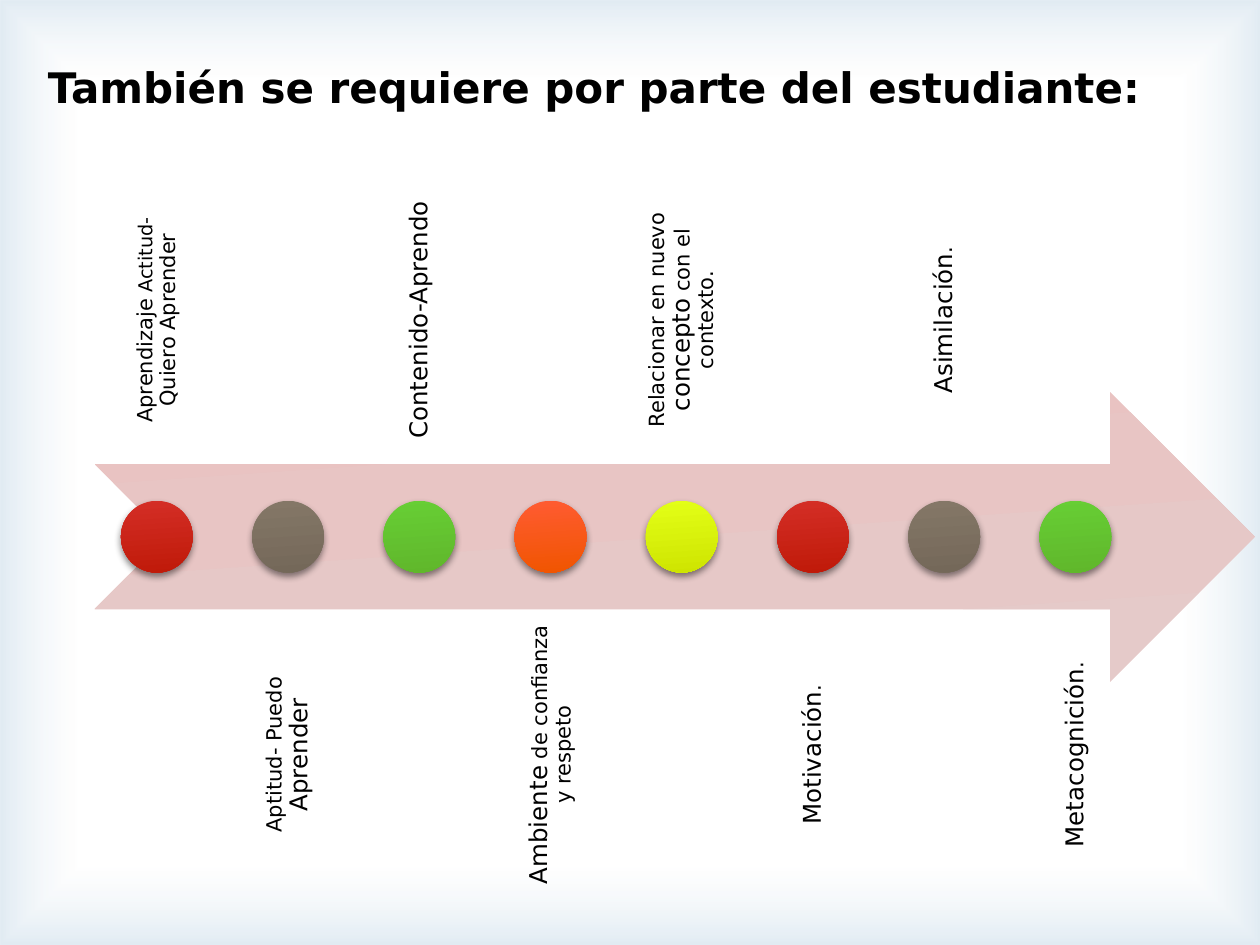
import dataclasses
import lxml.etree
import pptx
import pptx.dml.color
import pptx.enum.shapes
import pptx.enum.text
import pptx.oxml
import pptx.oxml.ns
import pptx.util

SHAPE = pptx.enum.shapes.MSO_SHAPE
ALIGN = pptx.enum.text.PP_ALIGN
ANCHOR = pptx.enum.text.MSO_ANCHOR
qn = pptx.oxml.ns.qn
inch = pptx.util.Inches


@dataclasses.dataclass(frozen=True)
class Theme:
    font: str = "DejaVu Sans"
    ink: str = "000000"
    head: int = 24
    large: int = 14
    base: int = 12
    small: int = 11
    arrow: tuple = ("E9C3C2", "E5CAC9")
    red: tuple = ("D42E26", "BF1A09")
    brown: tuple = ("847767", "746859")
    green: tuple = ("67CE35", "60B72B")
    orange: tuple = ("FF5B32", "F05500")
    yellow: tuple = ("E3FF17", "CEE400")


THEME = Theme()
WIDE, HIGH = 10, 7.5

# The row of steps: one column per step, labels by turns above and below
LEFT, PITCH = 0.75, 7.29 / 7
LABEL = (0.99, 2.3)
ROWS = (1.39, 4.84)
BAND = 3.11
DOT = 0.57

STEPS = [
    (THEME.red, [("Aprendizaje", THEME.base), (" Actitud-", THEME.small),
                 (" Quiero Aprender", THEME.base)]),
    (THEME.brown, [("Aptitud- Puedo ", THEME.base), ("Aprender", THEME.large)]),
    (THEME.green, [("Contenido-Aprendo", THEME.large)]),
    (THEME.orange, [("Ambiente", THEME.large),
                    (" de confianza y respeto", THEME.base)]),
    (THEME.yellow, [("Relacionar en nuevo ", THEME.base),
                    ("concepto", THEME.large),
                    (" con el contexto.", THEME.base)]),
    (THEME.red, [("Motivación", THEME.large), (".", THEME.base)]),
    (THEME.brown, [("Asimilación", THEME.large), (".", THEME.base)]),
    (THEME.green, [("Metacognición", THEME.large), (".", THEME.base)]),
]


def write(frame, runs, bold=False, align=ALIGN.LEFT, anchor=ANCHOR.TOP,
          inset=None, turn=None, line=None):
    """Fill a text frame with (text, size) runs."""
    frame.word_wrap = True
    frame.auto_size = pptx.enum.text.MSO_AUTO_SIZE.NONE
    frame.vertical_anchor = anchor
    if inset is not None:
        frame.margin_left = frame.margin_right = inch(inset)
        frame.margin_top = frame.margin_bottom = inch(inset)
    if turn:
        frame._txBody.bodyPr.set("vert", turn)
    para = frame.paragraphs[0]
    para.alignment = align
    if line:
        para.line_spacing = line
    for text, size in runs:
        run = para.add_run()
        run.text = text
        font = run.font
        font.name, font.size, font.bold = THEME.font, pptx.util.Pt(size), bold
        font.color.rgb = pptx.dml.color.RGBColor.from_string(THEME.ink)


def blend(shape, stops, radial=False):
    """Set a gradient of (percent, colour, opacity percent) stops."""
    grad = pptx.oxml.parse_xml(
        f'<a:gradFill {pptx.oxml.ns.nsdecls("a")} rotWithShape="1"/>')
    group = lxml.etree.SubElement(grad, qn("a:gsLst"))
    for place, colour, solid in stops:
        stop = lxml.etree.SubElement(group, qn("a:gs"), pos=str(place * 1000))
        tint = lxml.etree.SubElement(stop, qn("a:srgbClr"), val=colour)
        if solid < 100:
            lxml.etree.SubElement(tint, qn("a:alpha"), val=str(solid * 1000))
    if radial:
        route = lxml.etree.SubElement(grad, qn("a:path"), path="rect")
        lxml.etree.SubElement(route, qn("a:fillToRect"),
                              dict.fromkeys("ltrb", "50000"))
    else:
        lxml.etree.SubElement(grad, qn("a:lin"), ang=str(86 * 60000), scaled="0")
    shape.fill.solid()
    props = shape._element.spPr
    props.replace(props.find(qn("a:solidFill")), grad)


def draw(slide, kind, left, top, wide, high):
    shape = slide.shapes.add_shape(
        kind, inch(left), inch(top), inch(wide), inch(high))
    shape.shadow.inherit = False
    shape.line.fill.background()
    return shape


def shade(shape):
    """Give a shape a soft shadow straight below it."""
    effects = shape._element.spPr.find(qn("a:effectLst"))
    shadow = lxml.etree.SubElement(
        effects, qn("a:outerShdw"), blurRad=str(pptx.util.Pt(4)),
        dist=str(pptx.util.Pt(2)), dir=str(90 * 60000), rotWithShape="0")
    tint = lxml.etree.SubElement(shadow, qn("a:srgbClr"), val="000000")
    lxml.etree.SubElement(tint, qn("a:alpha"), val="46000")


def add_frame(slide):
    back = draw(slide, SHAPE.RECTANGLE, 0, 0, WIDE, HIGH)
    blend(back, [(0, "FFFFFF", 11), (83, "FFFFFF", 11), (100, "7EA9CA", 23)],
          radial=True)
    slide.shapes._spTree.insert(2, back._element)


def add_title(slide, text):
    title = slide.shapes.title
    title.left, title.top = inch(0.28), inch(0.44)
    title.width, title.height = inch(9.13), inch(0.5)
    write(title.text_frame, [(text, THEME.head)], bold=True)


def add_arrow(slide):
    arrow = draw(slide, SHAPE.NOTCHED_RIGHT_ARROW, LEFT, BAND, 9.21, LABEL[1])
    first, last = THEME.arrow
    blend(arrow, [(0, first, 100), (100, last, 100)])


def add_step(slide, col, tones, runs):
    left = LEFT + col * PITCH
    wide, high = LABEL
    box = slide.shapes.add_textbox(
        inch(left), inch(ROWS[col % 2]), inch(wide), inch(high))
    write(box.text_frame, runs, align=ALIGN.CENTER, anchor=ANCHOR.MIDDLE,
          inset=0.11 if runs[0][1] == THEME.large else 0.09,
          turn="vert270", line=0.9)
    dot = draw(slide, SHAPE.OVAL, left + (wide - DOT) / 2,
               BAND + (high - DOT) / 2, DOT, DOT)
    blend(dot, [(0, tones[0], 100), (100, tones[1], 100)])
    shade(dot)


def main():
    deck = pptx.Presentation()
    deck.slide_width, deck.slide_height = inch(WIDE), inch(HIGH)
    slide = deck.slides.add_slide(deck.slide_layouts.get_by_name("Title Only"))
    add_frame(slide)
    add_title(slide, "También se requiere por parte del estudiante:")
    add_arrow(slide)
    for col, (tones, runs) in enumerate(STEPS):
        add_step(slide, col, tones, runs)
    deck.save("out.pptx")


if __name__ == "__main__":
    main()
